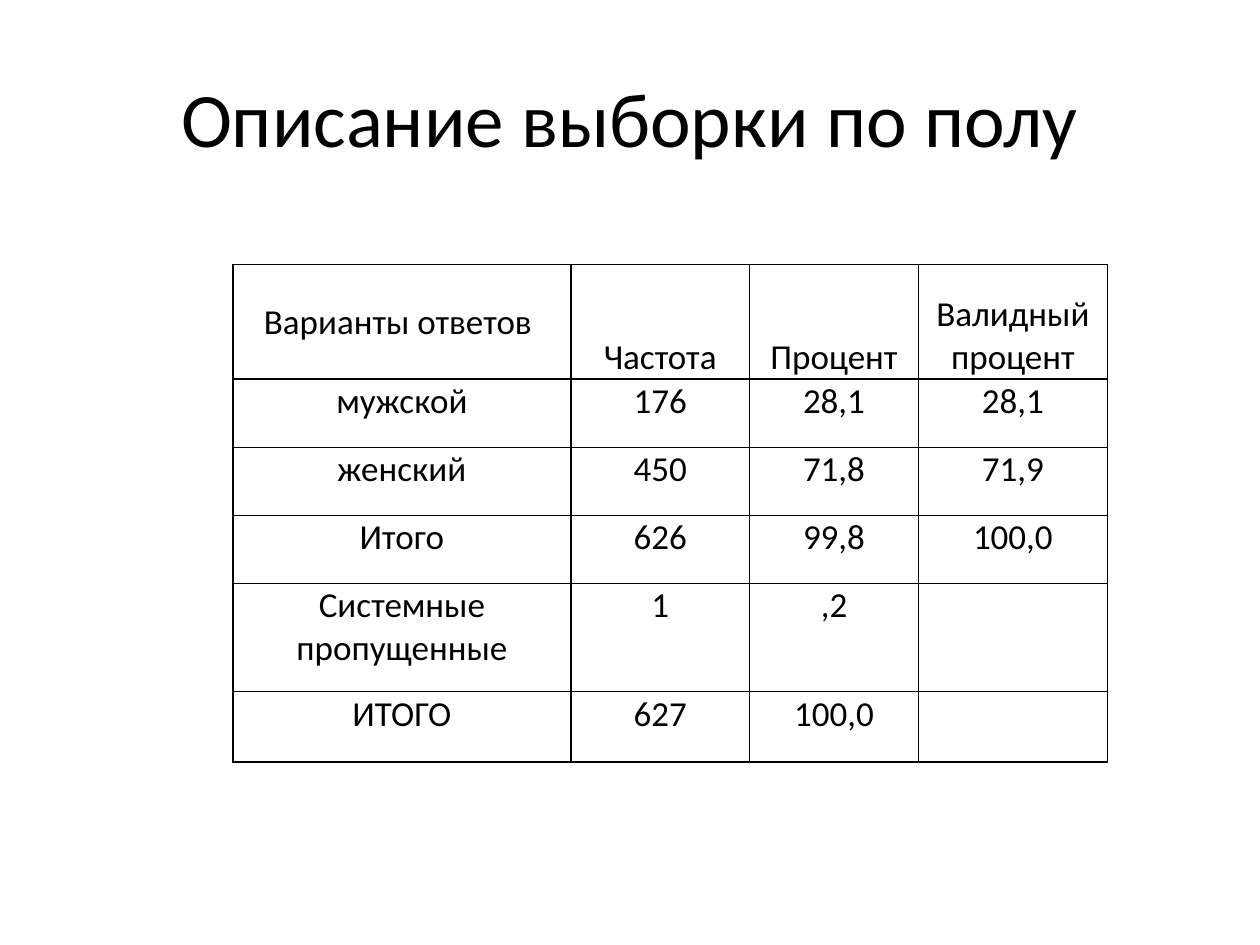
"""Build a slide with a table describing the survey sample by sex."""
from dataclasses import dataclass

from lxml import etree
from pptx import Presentation
from pptx.dml.color import RGBColor
from pptx.enum.text import MSO_ANCHOR, PP_ALIGN
from pptx.oxml.ns import qn
from pptx.util import Inches, Pt

TOP, MIDDLE, BOTTOM = MSO_ANCHOR.TOP, MSO_ANCHOR.MIDDLE, MSO_ANCHOR.BOTTOM
CENTER = PP_ALIGN.CENTER


@dataclass(frozen=True)
class Theme:
    font: str = "Calibri"
    ink: str = "000000"
    title_size: int = 44
    table_size: int = 20
    border_width: int = 1


@dataclass(frozen=True)
class Row:
    height: float
    texts: tuple[str, ...]
    anchors: tuple = (TOP,) * 4


THEME = Theme()
COLUMN_WIDTHS = (2.68, 1.42, 1.34, 1.5)
ROWS = (
    Row(0.91, ("Варианты ответов ", "Частота", "Процент", "Валидный процент"),
        (MIDDLE, BOTTOM, BOTTOM, BOTTOM)),
    Row(0.54, ("мужской", "176", "28,1", "28,1")),
    Row(0.54, ("женский", "450", "71,8", "71,9")),
    Row(0.54, ("Итого", "626", "99,8", "100,0")),
    Row(0.86, ("Системные пропущенные", "1", ",2", "")),
    Row(0.56, ("ИТОГО", "627", "100,0", "")),
)
CELL_MARGINS = {
    "margin_left": Inches(0.01),
    "margin_right": Inches(0.01),
    "margin_top": Inches(0.01),
    "margin_bottom": Inches(0),
}


def apply_format(target, values: dict) -> None:
    for name, value in values.items():
        setattr(target, name, value)


def write_text(frame, text: str, size: int) -> None:
    para = frame.paragraphs[0]
    para.alignment = CENTER
    apply_format(para.font, {"name": THEME.font, "size": Pt(size)})
    if text:
        span = para.add_run()
        span.text = text
        apply_format(span.font, {"name": THEME.font, "size": Pt(size)})
        span.font.color.rgb = RGBColor.from_string(THEME.ink)


def add_title(page, text: str) -> None:
    box = page.shapes.add_textbox(Inches(0.5), Inches(0.3), Inches(9), Inches(1.25))
    apply_format(box.text_frame, {"word_wrap": True, "vertical_anchor": MIDDLE})
    write_text(box.text_frame, text, THEME.title_size)


def add_borders(cell) -> None:
    properties = cell._tc.get_or_add_tcPr()
    for side in ("lnL", "lnR", "lnT", "lnB"):
        line = etree.SubElement(properties, qn(f"a:{side}"), w=str(Pt(THEME.border_width)))
        fill = etree.SubElement(line, qn("a:solidFill"))
        etree.SubElement(fill, qn("a:srgbClr"), val=THEME.ink)


def add_sample_table(page) -> None:
    table = page.shapes.add_table(
        len(ROWS), len(COLUMN_WIDTHS), Inches(1.85), Inches(2.1),
        Inches(sum(COLUMN_WIDTHS)), Inches(sum(row.height for row in ROWS)),
    ).table
    apply_format(table, {"first_row": False, "horz_banding": False})
    for column, width in zip(table.columns, COLUMN_WIDTHS):
        column.width = Inches(width)
    for table_row, row in zip(table.rows, ROWS):
        table_row.height = Inches(row.height)
        for cell, text, anchor in zip(table_row.cells, row.texts, row.anchors):
            apply_format(cell, CELL_MARGINS | {"vertical_anchor": anchor})
            add_borders(cell)
            cell.fill.background()
            write_text(cell.text_frame, text, THEME.table_size)


def main() -> None:
    deck = Presentation()
    apply_format(deck, {"slide_width": Inches(10), "slide_height": Inches(7.5)})
    page = deck.slides.add_slide(deck.slide_layouts[6])
    add_title(page, "Описание выборки по полу")
    add_sample_table(page)
    deck.save("out.pptx")


if __name__ == "__main__":
    main()
